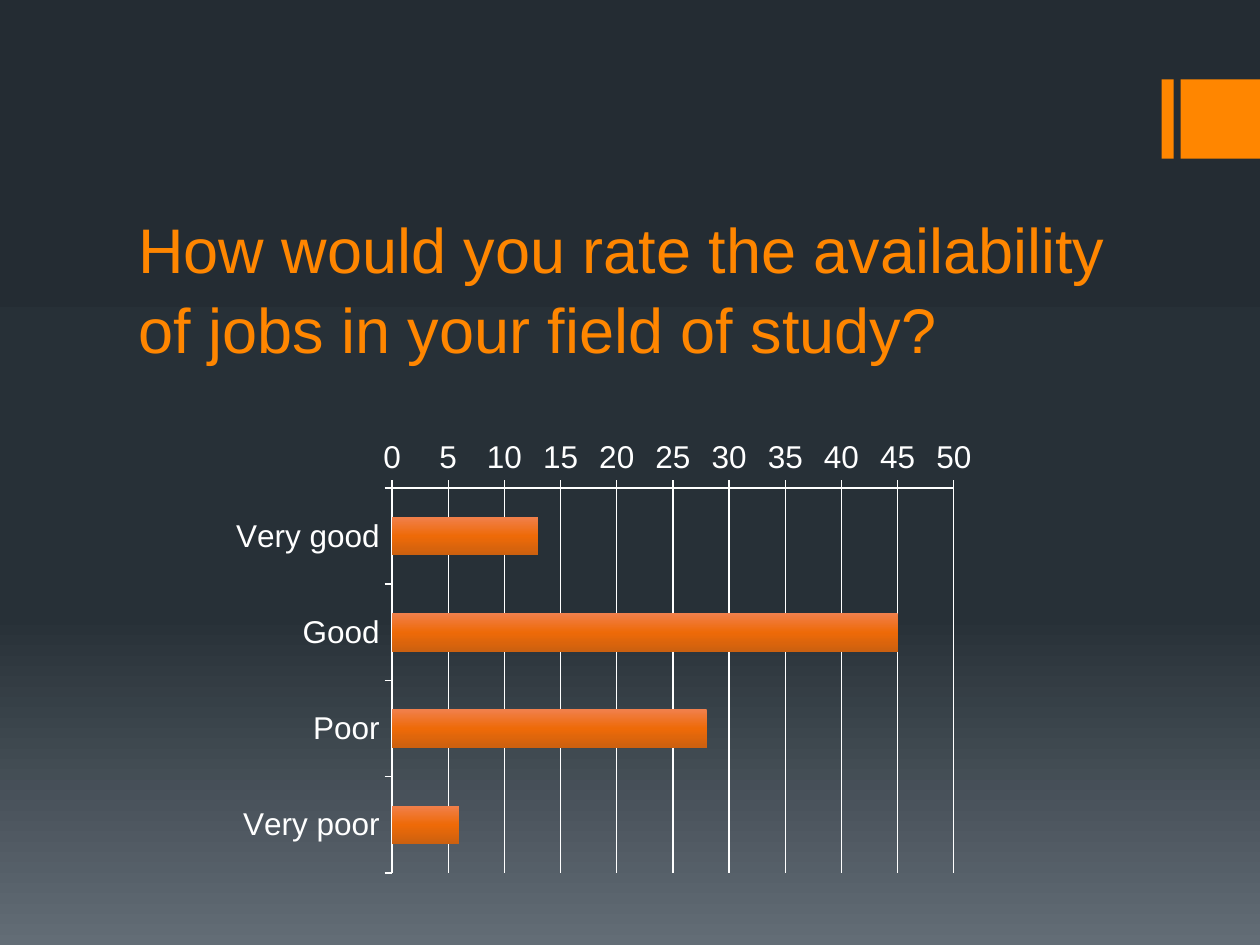
"""Build a survey slide with a bar chart of job availability ratings."""
from dataclasses import dataclass

import lxml.etree
import pptx
import pptx.chart.data
import pptx.dml.color
import pptx.enum.chart
import pptx.enum.shapes
import pptx.enum.text
import pptx.oxml.ns
import pptx.util
from pptx.util import Cm, Pt


@dataclass(frozen=True)
class Theme:
    accent: str = "FF8600"
    text: str = "FFFFFF"
    background: tuple = ((0, "242C33"), (65, "273037"), (100, "636D76"))
    bar: tuple = ((0, "F1804C"), (50, "EE6A08"), (100, "CC600F"))
    font: str = "Arial"
    title_size: int = 36
    chart_size: int = 18
    line_width: float = 0.75


@dataclass(frozen=True)
class Box:
    left: float
    top: float
    width: float
    height: float

    def lengths(self) -> tuple:
        return Cm(self.left), Cm(self.top), Cm(self.width), Cm(self.height)


THEME = Theme()
ACCENT_BLOCKS = (Box(23.42, 1.6, 0.24, 1.6), Box(23.8, 1.6, 1.6, 1.6))
TITLE_BOX = Box(2.54, 4.3, 20.32, 3.2)
CHART_BOX = Box(4.45, 8.69, 15.44, 9.09)
TITLE = "How would you rate the availability of jobs in your field of study?"
RATINGS = {"Very good": 13, "Good": 45, "Poor": 28, "Very poor": 6}


def rgb(value: str) -> pptx.dml.color.RGBColor:
    return pptx.dml.color.RGBColor.from_string(value)


def style_font(font, size: int, color: str) -> None:
    font.name = THEME.font
    font.size = Pt(size)
    font.color.rgb = rgb(color)


def fill_downward(fill, owner, stops: tuple) -> None:
    fill.gradient()
    fill.gradient_angle = 270
    qualified = pptx.oxml.ns.qn
    stop_list = owner.find(".//" + qualified("a:gsLst"))
    for old_stop in list(stop_list):
        stop_list.remove(old_stop)
    for percent, color in stops:
        stop = lxml.etree.SubElement(stop_list, qualified("a:gs"), pos=str(percent * 1000))
        lxml.etree.SubElement(stop, qualified("a:srgbClr"), val=color)


def add_accent_block(slide, box: Box) -> None:
    shape = slide.shapes.add_shape(pptx.enum.shapes.MSO_SHAPE.RECTANGLE, *box.lengths())
    shape.shadow.inherit = False
    shape.fill.solid()
    shape.fill.fore_color.rgb = rgb(THEME.accent)
    shape.line.fill.background()


def add_title(slide, box: Box, text: str) -> None:
    text_frame = slide.shapes.add_textbox(*box.lengths()).text_frame
    text_frame.word_wrap = True
    text_frame.vertical_anchor = pptx.enum.text.MSO_ANCHOR.BOTTOM
    text_frame.text = text
    paragraph = text_frame.paragraphs[0]
    paragraph.line_spacing = 1.05
    style_font(paragraph.runs[0].font, THEME.title_size, THEME.accent)


def style_line(line) -> None:
    line.color.rgb = rgb(THEME.text)
    line.width = Pt(THEME.line_width)


def add_rating_chart(slide, box: Box, ratings: dict) -> None:
    data = pptx.chart.data.CategoryChartData()
    data.categories = list(ratings)
    data.add_series("Series 1", list(ratings.values()))
    chart_type = pptx.enum.chart.XL_CHART_TYPE.BAR_CLUSTERED
    chart = slide.shapes.add_chart(chart_type, *box.lengths(), data).chart
    chart.has_legend = False
    chart.has_title = False
    style_font(chart.font, THEME.chart_size, THEME.text)
    for axis in (chart.category_axis, chart.value_axis):
        axis.major_tick_mark = pptx.enum.chart.XL_TICK_MARK.OUTSIDE
        style_line(axis.format.line)
    chart.category_axis.reverse_order = True
    chart.value_axis.minimum_scale = 0
    chart.value_axis.maximum_scale = 50
    chart.value_axis.major_unit = 5
    style_line(chart.value_axis.major_gridlines.format.line)
    plot = chart.plots[0]
    plot.vary_by_categories = False
    plot.gap_width = 150
    fill_downward(plot.series[0].format.fill, chart.element, THEME.bar)


def main() -> None:
    presentation = pptx.Presentation()
    presentation.slide_width = Cm(25.4)
    presentation.slide_height = Cm(19.05)
    slide = presentation.slides.add_slide(presentation.slide_layouts[6])
    fill_downward(slide.background.fill, slide.element, THEME.background)
    for block in ACCENT_BLOCKS:
        add_accent_block(slide, block)
    add_title(slide, TITLE_BOX, TITLE)
    add_rating_chart(slide, CHART_BOX, RATINGS)
    presentation.save("out.pptx")


if __name__ == "__main__":
    main()
